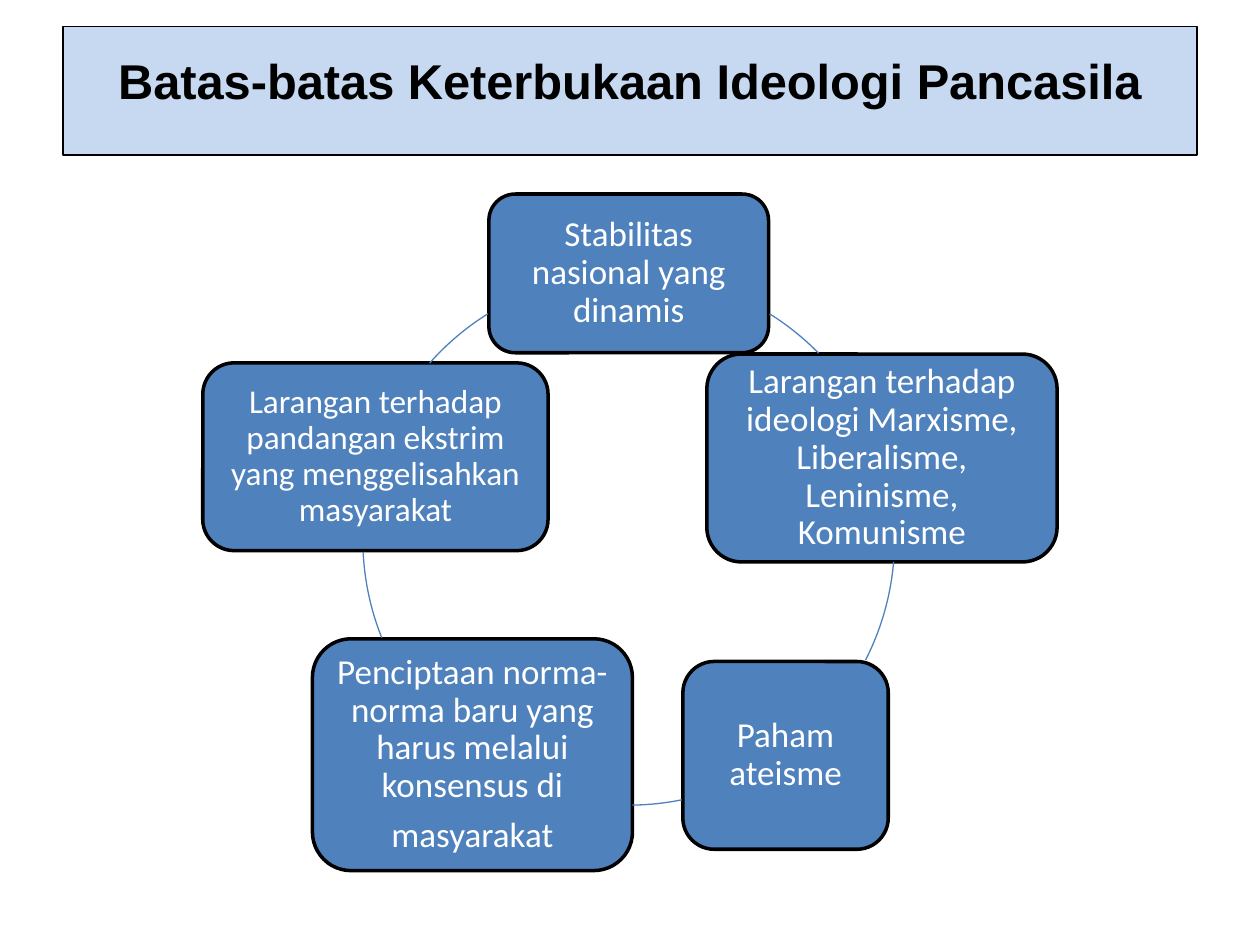
from pptx import Presentation, util as u
from pptx.dml.color import RGBColor
from pptx.enum import shapes, text

prs = Presentation()
prs.slide_width, prs.slide_height = u.Inches(10), u.Inches(7.5)
s = prs.slides.add_slide(prs.slide_layouts[6])
cell = prs.slide_width / 100  # grid of 100 columns by 75 rows


def color(fmt, value):
    fmt.rgb = RGBColor.from_string(value)


def add(kind, box, line, width, fill=None):
    sp = s.shapes.add_shape(kind, *(round(n * cell) for n in box))
    sp.shadow.inherit = False
    if fill:
        sp.fill.solid()
        color(sp.fill.fore_color, fill)
    else:
        sp.fill.background()
    color(sp.line.color, line)
    sp.line.width = u.Pt(width)
    return sp


# Title bar
sp = add(shapes.MSO_SHAPE.RECTANGLE, (5, 2.1, 90, 10.2), "000000", 0.75, "C6D9F1")
tf = sp.text_frame
tf.word_wrap = True
tf.vertical_anchor = text.MSO_ANCHOR.MIDDLE
tf.margin_bottom = round(2.2 * cell)
p = tf.paragraphs[0]
p.text = "Batas-batas Keterbukaan Ideologi Pancasila"
p.alignment = text.PP_ALIGN.CENTER
p.font.name, p.font.size, p.font.bold = "Arial", u.Pt(27.9), True
color(p.font.color, "000000")

# Cycle nodes, clockwise from the top: box, text size, paragraphs
nodes = [
    ((38.8, 15.4, 22.2, 12.6), 20, ["Stabilitas nasional yang dinamis"]),
    ((56.1, 28.1, 27.8, 16.5), 20,
     ["Larangan terhadap ideologi Marxisme, Liberalisme, Leninisme, Komunisme"]),
    ((54.2, 52.5, 16.3, 14.9), 20, ["Paham ateisme"]),
    ((24.8, 50.7, 25.4, 18.4), 20,
     ["Penciptaan norma-norma baru yang harus melalui konsensus di", "masyarakat"]),
    ((16.1, 28.8, 27.4, 14.9), 19,
     ["Larangan terhadap pandangan ekstrim yang menggelisahkan masyarakat"]),
]
for box, size, lines in nodes:
    sp = add(shapes.MSO_SHAPE.ROUNDED_RECTANGLE, box, "000000", 2, "4F81BD")
    tf = sp.text_frame
    tf.word_wrap = True
    tf.vertical_anchor = text.MSO_ANCHOR.MIDDLE
    tf.margin_left = tf.margin_right = tf.margin_top = tf.margin_bottom = round(0.8 * cell)
    tf.text = "\n".join(lines)
    for p in tf.paragraphs:
        p.alignment = text.PP_ALIGN.CENTER
        p.line_spacing = 0.9
        p.space_after = u.Pt(round(0.35 * size))
        p.font.name, p.font.size = "Calibri", u.Pt(size)
        color(p.font.color, "FFFFFF")

# Arcs of one circle between the nodes, in degrees clockwise from the right
for angles in [(302, 315.6), (4.9, 27), (78.5, 89.2), (158.3, 177.3), (221.5, 238)]:
    sp = add(shapes.MSO_SHAPE.ARC, (28.8, 21.7, 42.2, 42.2), "4F81BD", 0.75)
    for i, angle in enumerate(angles):
        sp.adjustments[i] = angle * 0.6  # 60000 units a degree, scaled by 100000

prs.save("out.pptx")
